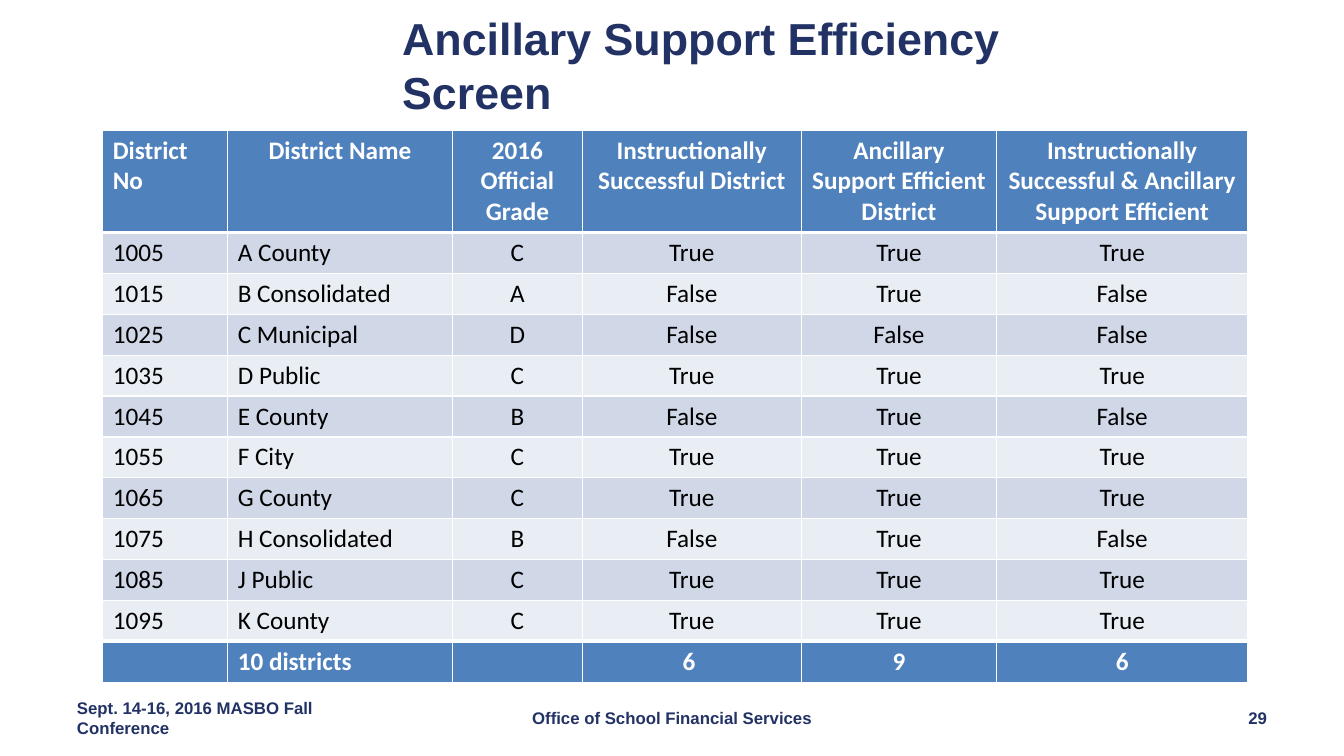
"""Build the Ancillary Support Efficiency Screen slide."""
from dataclasses import dataclass
from typing import NamedTuple

from lxml import etree
from pptx import Presentation
from pptx import util as u
from pptx.dml.color import RGBColor
from pptx.enum import text
from pptx.oxml import ns


@dataclass(frozen=True)
class Theme:
    navy: str = "223264"
    white: str = "FFFFFF"
    black: str = "000000"
    accent: str = "4F81BD"
    bands: tuple[str, str] = ("D0D8E8", "E9EDF4")
    heading_font: str = "Arial"
    table_font: str = "Calibri"
    title_size: int = 32
    table_size: int = 18
    footer_size: int = 12
    thin: int = 1
    thick: int = 3


class Style(NamedTuple):
    font: str
    size: int
    color: str
    bold: bool


class District(NamedTuple):
    number: str
    name: str
    grade: str
    successful: bool
    efficient: bool


class Footer(NamedTuple):
    wording: str
    left: float
    width: float
    align: text.PP_ALIGN


class Column(NamedTuple):
    heading: str
    width: float
    heading_align: text.PP_ALIGN
    body_align: text.PP_ALIGN


THEME = Theme()
LEFT, CENTER, RIGHT = text.PP_ALIGN.LEFT, text.PP_ALIGN.CENTER, text.PP_ALIGN.RIGHT
TITLE = Style(THEME.heading_font, THEME.title_size, THEME.navy, True)
FOOTER = Style(THEME.heading_font, THEME.footer_size, THEME.navy, True)
BODY = Style(THEME.table_font, THEME.table_size, THEME.black, False)
STRONG = Style(THEME.table_font, THEME.table_size, THEME.white, True)
HEADER_HEIGHT, ROW_HEIGHT = 2.57, 1.03

COLUMNS = (
    Column("District No", 3.15, LEFT, LEFT),
    Column("District Name", 5.66, CENTER, LEFT),
    Column("2016 Official Grade", 3.28, CENTER, CENTER),
    Column("Instructionally Successful District", 5.51, CENTER, CENTER),
    Column("Ancillary Support Efficient District", 4.93, CENTER, CENTER),
    Column("Instructionally Successful & Ancillary Support Efficient", 6.32, CENTER, CENTER),
)
DISTRICTS = (
    District("1005", "A County", "C", True, True),
    District("1015", "B Consolidated", "A", False, True),
    District("1025", "C Municipal", "D", False, False),
    District("1035", "D Public", "C", True, True),
    District("1045", "E County", "B", False, True),
    District("1055", "F City", "C", True, True),
    District("1065", "G County", "C", True, True),
    District("1075", "H Consolidated", "B", False, True),
    District("1085", "J Public", "C", True, True),
    District("1095", "K County", "C", True, True),
)
FOOTERS = (
    Footer("Sept. 14-16, 2016 MASBO Fall Conference", 1.69, 7.9, LEFT),
    Footer("Office of School Financial Services", 11.58, 10.72, CENTER),
    Footer("29", 24.28, 7.9, RIGHT),
)


def write(frame, wording: str, style: Style, align: text.PP_ALIGN) -> None:
    """Write one styled run into the first paragraph of a frame."""
    para = frame.paragraphs[0]
    para.alignment = align
    para.font.size = u.Pt(style.size)
    if wording:
        span = para.add_run()
        span.text = wording
        span.font.name = style.font
        span.font.size = u.Pt(style.size)
        span.font.bold = style.bold
        span.font.color.rgb = RGBColor.from_string(style.color)


def fill_cell(cell, color: str, top: int, bottom: int) -> None:
    """Colour a cell and rule its four edges in white."""
    cell.fill.solid()
    cell.fill.fore_color.rgb = RGBColor.from_string(color)
    properties = cell._tc.get_or_add_tcPr()
    edges = (("a:lnL", THEME.thin), ("a:lnR", THEME.thin), ("a:lnT", top), ("a:lnB", bottom))
    for position, (tag, points) in enumerate(edges):
        line = etree.Element(ns.qn(tag), w=str(u.Pt(points)))
        solid = etree.SubElement(line, ns.qn("a:solidFill"))
        etree.SubElement(solid, ns.qn("a:srgbClr"), val=THEME.white)
        properties.insert(position, line)


def table_rows() -> list[list[str]]:
    """Return the headings, the district rows and the totals."""
    headings = [column.heading for column in COLUMNS]
    flags = [(d.successful, d.efficient, d.successful and d.efficient) for d in DISTRICTS]
    body = [[*d[:3], *map(str, marks)] for d, marks in zip(DISTRICTS, flags)]
    successful, efficient, both = map(sum, zip(*flags))
    totals = ["", f"{len(DISTRICTS)} districts", "", f"{successful} ", str(efficient), str(both)]
    return [headings, *body, totals]


def add_title(page) -> None:
    """Place and format the title placeholder."""
    title = page.shapes.title
    title.left, title.top, title.width, title.height = map(u.Cm, (9.88, 0.15, 19.33, 2.97))
    title.text_frame.word_wrap = True
    title.text_frame.auto_size = text.MSO_AUTO_SIZE.NONE
    title.text_frame.vertical_anchor = text.MSO_ANCHOR.TOP
    write(title.text_frame, "Ancillary Support Efficiency Screen", TITLE, LEFT)


def add_district_table(page) -> None:
    """Draw the banded table of districts with its header and totals."""
    rows = table_rows()
    last = len(rows) - 1
    width = sum(column.width for column in COLUMNS)
    height = HEADER_HEIGHT + last * ROW_HEIGHT
    table = page.shapes.add_table(
        len(rows), len(COLUMNS), u.Cm(2.59), u.Cm(3.28), u.Cm(width), u.Cm(height)
    ).table
    table.last_row = True
    for column, plan in zip(table.columns, COLUMNS):
        column.width = u.Cm(plan.width)
    for r, values in enumerate(rows):
        table.rows[r].height = u.Cm(ROW_HEIGHT if r else HEADER_HEIGHT)
        strong = r in (0, last)
        color = THEME.accent if strong else THEME.bands[(r - 1) % 2]
        top = THEME.thick if r in (1, last) else THEME.thin
        bottom = THEME.thick if r in (0, last - 1) else THEME.thin
        for c, (plan, value) in enumerate(zip(COLUMNS, values)):
            cell = table.cell(r, c)
            fill_cell(cell, color, top, bottom)
            align = plan.body_align if r else plan.heading_align
            write(cell.text_frame, value, STRONG if strong else BODY, align)


def add_footer(page, footer: Footer) -> None:
    """Add one footer text box."""
    box = page.shapes.add_textbox(
        u.Cm(footer.left), u.Cm(17.39), u.Cm(footer.width), u.Cm(1.4)
    )
    box.text_frame.word_wrap = True
    box.text_frame.vertical_anchor = text.MSO_ANCHOR.MIDDLE
    write(box.text_frame, footer.wording, FOOTER, footer.align)


def main() -> None:
    """Build and save the deck."""
    deck = Presentation()
    deck.slide_width, deck.slide_height = u.Cm(33.87), u.Cm(19.05)
    page = deck.slides.add_slide(deck.slide_layouts[5])
    add_district_table(page)
    add_title(page)
    for footer in FOOTERS:
        add_footer(page, footer)
    deck.save("out.pptx")


if __name__ == "__main__":
    main()
